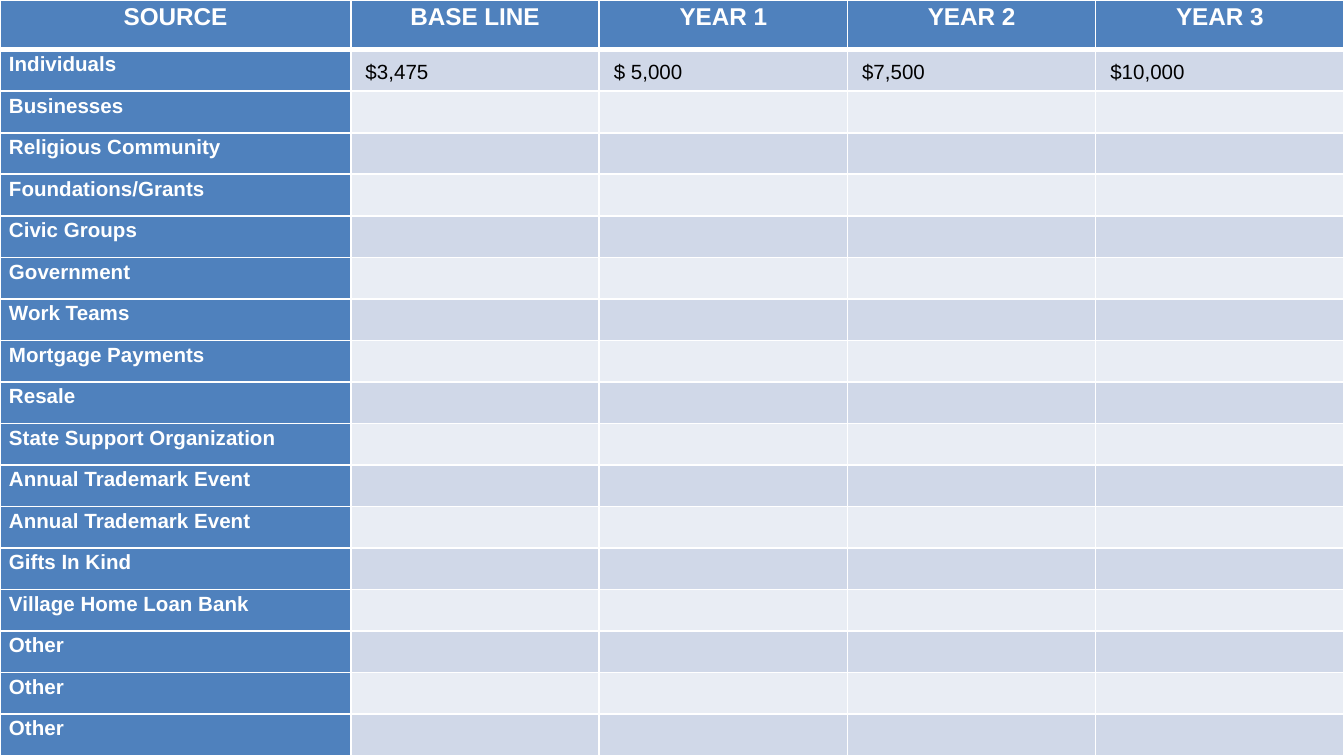
from lxml.etree import SubElement as Sub
from pptx import Presentation
from pptx.dml.color import RGBColor as RGB
from pptx.enum.text import MSO_ANCHOR as Anchor, PP_ALIGN as Align
from pptx.oxml.ns import qn
from pptx.util import Cm, Pt

WIDE, HIGH = 25.4, 14.28
FIRST, HEAD = 6.63, 0.94
COLORS = {
    "blue": "4F81BD",
    "dark": "D0D8E8",
    "light": "E9EDF4",
    "white": "FFFFFF",
    "black": "000000",
}
TITLES = ["SOURCE", "BASE LINE", "YEAR 1", "YEAR 2", "YEAR 3"]
FUNDS = [
    "Individuals", "Businesses", "Religious Community", "Foundations/Grants",
    "Civic Groups", "Government", "Work Teams", "Mortgage Payments", "Resale",
    "State Support Organization", "Annual Trademark Event",
    "Annual Trademark Event", "Gifts In Kind", "Village Home Loan Bank",
    "Other", "Other", "Other",
]
SUMS = [" $3,475", " $ 5,000", " $7,500", " $10,000"]


def edge(cell, side, width):
    line = Sub(cell._tc.get_or_add_tcPr(), qn(f"a:ln{side}"), w=str(Pt(width)))
    fill = Sub(line, qn("a:solidFill"))
    Sub(fill, qn("a:srgbClr"), val=COLORS["white"])


def style(cell, fill, top=1, bottom=1):
    for side, width in (("L", 1), ("R", 1), ("T", top), ("B", bottom)):
        edge(cell, side, width)
    cell.fill.solid()
    cell.fill.fore_color.rgb = RGB.from_string(COLORS[fill])
    cell.margin_left = cell.margin_right = Cm(0.17)
    cell.margin_top = cell.margin_bottom = 0


def write(cell, text, size=11, color="white", bold=True, align=Align.LEFT):
    cell.text = text
    para = cell.text_frame.paragraphs[0]
    para.alignment = align
    para.line_spacing = 1.15
    font = para.font
    font.name = "Arial"
    font.size = Pt(size)
    font.bold = bold
    font.color.rgb = RGB.from_string(COLORS[color])


def add_grid(slide):
    rows, cols = len(FUNDS) + 1, len(TITLES)
    frame = slide.shapes.add_table(rows, cols, 0, 0, Cm(WIDE), Cm(HIGH))
    grid = frame.table
    for i, col in enumerate(grid.columns):
        col.width = Cm((WIDE - FIRST) / (cols - 1) if i else FIRST)
    for i, row in enumerate(grid.rows):
        row.height = Cm((HIGH - HEAD) / len(FUNDS) if i else HEAD)
    return grid


def fill_head(grid):
    for col, title in enumerate(TITLES):
        cell = grid.cell(0, col)
        style(cell, "blue", bottom=3)
        write(cell, title, size=13, align=Align.CENTER)


def fill_body(grid):
    for row, fund in enumerate(FUNDS, 1):
        top = 3 if row == 1 else 1
        name = grid.cell(row, 0)
        style(name, "blue", top)
        write(name, fund)
        sums = SUMS if row == 1 else [""] * len(SUMS)
        for col, text in enumerate(sums, 1):
            cell = grid.cell(row, col)
            style(cell, "dark" if row % 2 else "light", top)
            cell.vertical_anchor = Anchor.MIDDLE
            write(cell, text, color="black", bold=False)


def main():
    deck = Presentation()
    deck.slide_width, deck.slide_height = Cm(WIDE), Cm(HIGH)
    slide = deck.slides.add_slide(deck.slide_layouts[6])
    grid = add_grid(slide)
    fill_head(grid)
    fill_body(grid)
    deck.save("out.pptx")


if __name__ == "__main__":
    main()
